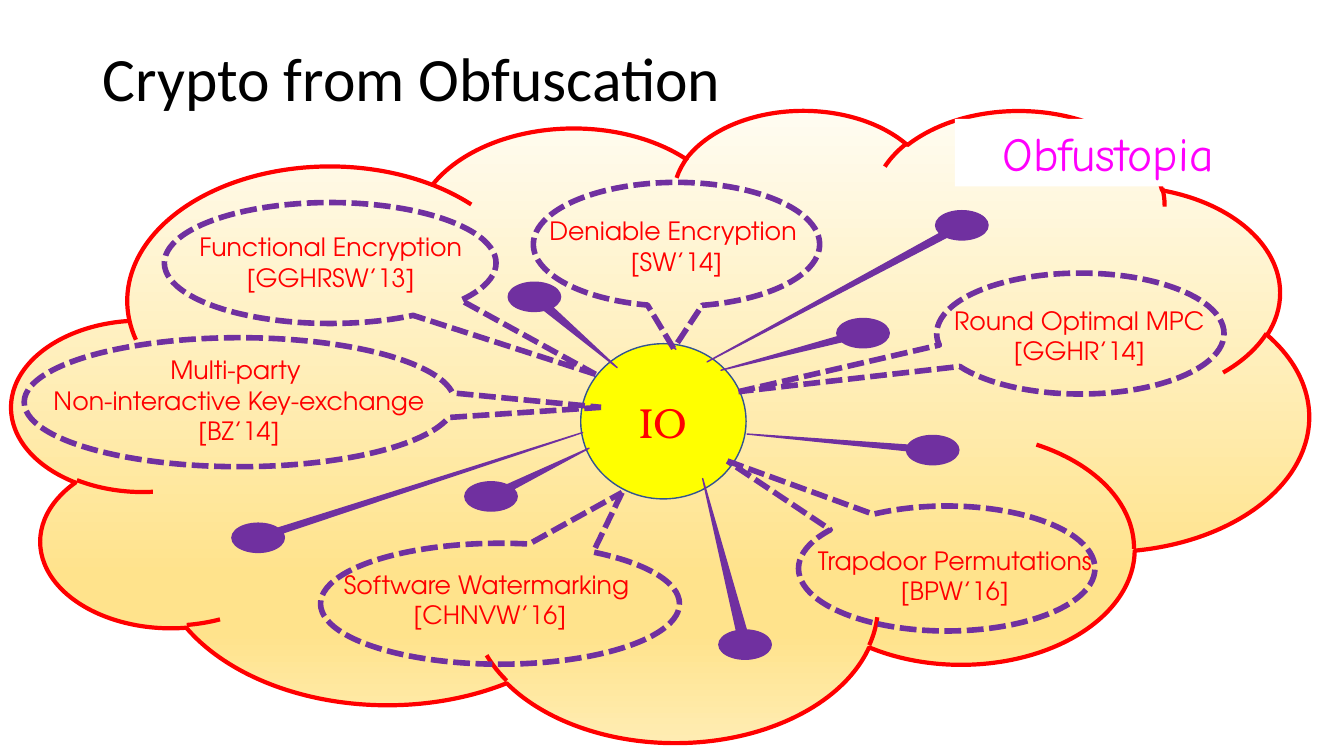
from lxml import etree
from pptx import Presentation
from pptx import util as u
from pptx.dml.color import RGBColor
from pptx.enum import dml, shapes, text
from pptx.oxml import ns

COLORS = {
    "black": "000000", "white": "FFFFFF", "red": "FF0000", "purple": "7030A0",
    "yellow": "FFFF00", "navy": "325491", "magenta": "FF00FD",
}
CLOUD_STOPS = [(0, "FFFCF2"), (74, "FFE38C"), (83, "FFE38C"), (100, "FFECB2")]
LABEL = {"size": 18, "name": "TeX Gyre Adventor", "color": "red"}
HUB = {"size": 30, "name": "TeX Gyre Bonum", "color": "red"}
TITLE = {"size": 44, "name": "Calibri", "color": "black"}
REALM = {"size": 34, "name": "Comic Neue", "color": "magenta"}

APPLICATIONS = [
    (["Deniable Encryption ", "[SW’14]"],
     (5.29, 2.09, 2.84, 0.71), (5.29, 1.81, 2.84, 1.23), (-0.01, 0.84)),
    (["Round Optimal MPC", "[GGHR’14]"],
     (9.34, 2.98, 2.73, 0.71), (9.29, 2.71, 2.85, 1.2), (-1.19, 0.48)),
    (["Trapdoor Permutations [BPW’16]"],
     (7.94, 5.36, 3.06, 0.71), (7.92, 5.02, 2.94, 1.24), (-0.74, -0.86)),
    (["Software Watermarking ", "[CHNVW’16]"],
     (3.26, 5.6, 3.2, 0.71), (3.18, 5.39, 3.56, 1.2), (0.34, -0.92)),
    (["Functional Encryption [GGHRSW’13]"],
     (1.7, 2.25, 3.16, 0.71), (1.63, 2.01, 3.29, 1.2), (0.8, 0.92)),
    (["Multi-party ", "Non-interactive Key-exchange", "[BZ’14]"],
     (0.32, 3.47, 4.1, 1.31), (0.24, 3.35, 4.27, 1.28), (0.84, 0.04)),
]
PIN_SIZE = (0.52, 0.29)
PINS = [
    ((4.61, 4.78), (1.87, -1.65)), ((2.3, 5.19), (6.19, -3.6)),
    ((8.99, 4.32), (-3.54, -0.55)), ((9.28, 2.09), (-4.86, 4.67)),
    ((8.3, 3.16), (-2.71, 1.27)), ((7.13, 6.25), (-0.81, -5.68)),
    ((5.04, 2.8), (1.58, 2.42)),
]


class SlideBuilder:
    """Holds the colours and the current slide, and draws its elements."""

    def __init__(self, slide, colors):
        self.slide = slide
        self.colors = colors

    def color(self, name):
        return RGBColor.from_string(self.colors[name])

    def fill_text(self, shape, lines, style, align=text.PP_ALIGN.CENTER, **frame_format):
        frame = shape.text_frame
        for name, value in {"word_wrap": True, **frame_format}.items():
            setattr(frame, name, value)
        for index, line in enumerate(lines):
            paragraph = frame.add_paragraph() if index else frame.paragraphs[0]
            paragraph.alignment = align
            run = paragraph.add_run()
            run.text = line
            font_format = {"size": u.Pt(style["size"]), "name": style["name"], "bold": False}
            for name, value in font_format.items():
                setattr(run.font, name, value)
            run.font.color.rgb = self.color(style["color"])

    def shape(self, kind, box, fill=None, line=None, width=1, dash=None):
        shape = self.slide.shapes.add_shape(kind, *map(u.Inches, box))
        shape.shadow.inherit = False
        if fill:
            shape.fill.solid()
            shape.fill.fore_color.rgb = self.color(fill)
        else:
            shape.fill.background()
        if line:
            shape.line.color.rgb = self.color(line)
            for name, value in {"width": u.Pt(width), "dash_style": dash}.items():
                setattr(shape.line, name, value)
        else:
            shape.line.fill.background()
        return shape

    def cloud(self, box, stops):
        cloud = self.shape(shapes.MSO_SHAPE.CLOUD, box, line="red", width=3)
        cloud.fill.gradient()
        cloud.fill.gradient_angle = 270
        stop_list = cloud._element.spPr.find(".//" + ns.qn("a:gsLst"))
        for stop in list(stop_list):
            stop_list.remove(stop)
        for position, color in stops:
            stop = etree.SubElement(stop_list, ns.qn("a:gs"), pos=str(position * 1000))
            etree.SubElement(stop, ns.qn("a:srgbClr"), val=color)

    def callout(self, box, tip, **style):
        callout = self.shape(shapes.MSO_SHAPE.OVAL_CALLOUT, box, line="purple", **style)
        for index, value in enumerate(tip):
            callout.adjustments[index] = value

    def label(self, lines, box):
        label = self.slide.shapes.add_textbox(*map(u.Inches, box))
        self.fill_text(label, lines, LABEL)

    def title(self, line, box):
        title = self.slide.shapes.title
        for name, value in zip(("left", "top", "width", "height"), box):
            setattr(title, name, u.Inches(value))
        self.fill_text(title, [line], TITLE, text.PP_ALIGN.LEFT,
                       vertical_anchor=text.MSO_ANCHOR.MIDDLE,
                       auto_size=text.MSO_AUTO_SIZE.NONE)
        title.text_frame.paragraphs[0].line_spacing = 0.9
        self.slide.shapes._spTree.append(title._element)


def main():
    presentation = Presentation()
    presentation.slide_width = u.Inches(13.33)
    presentation.slide_height = u.Inches(7.5)
    slide = presentation.slides.add_slide(presentation.slide_layouts[5])
    builder = SlideBuilder(slide, COLORS)

    builder.cloud((0.12, 1.08, 12.86, 6.27), CLOUD_STOPS)
    hub = builder.shape(shapes.MSO_SHAPE.OVAL, (5.76, 3.41, 1.64, 1.54), "yellow", "navy")
    builder.fill_text(hub, ["IO"], HUB, vertical_anchor=text.MSO_ANCHOR.MIDDLE)
    for lines, label_box, callout_box, tip in APPLICATIONS:
        builder.label(lines, label_box)
        builder.callout(callout_box, tip, width=4, dash=dml.MSO_LINE.SQUARE_DOT)
    for corner, tip in PINS:
        builder.callout(corner + PIN_SIZE, tip, fill="purple")

    builder.title("Crypto from Obfuscation", (0.92, 0.4, 11.5, 0.81))
    realm = builder.shape(shapes.MSO_SHAPE.RECTANGLE, (9.47, 1.18, 3.04, 0.67), "white")
    builder.fill_text(realm, ["Obfustopia"], REALM, word_wrap=False,
                      vertical_anchor=text.MSO_ANCHOR.TOP)
    presentation.save("out.pptx")


if __name__ == "__main__":
    main()
